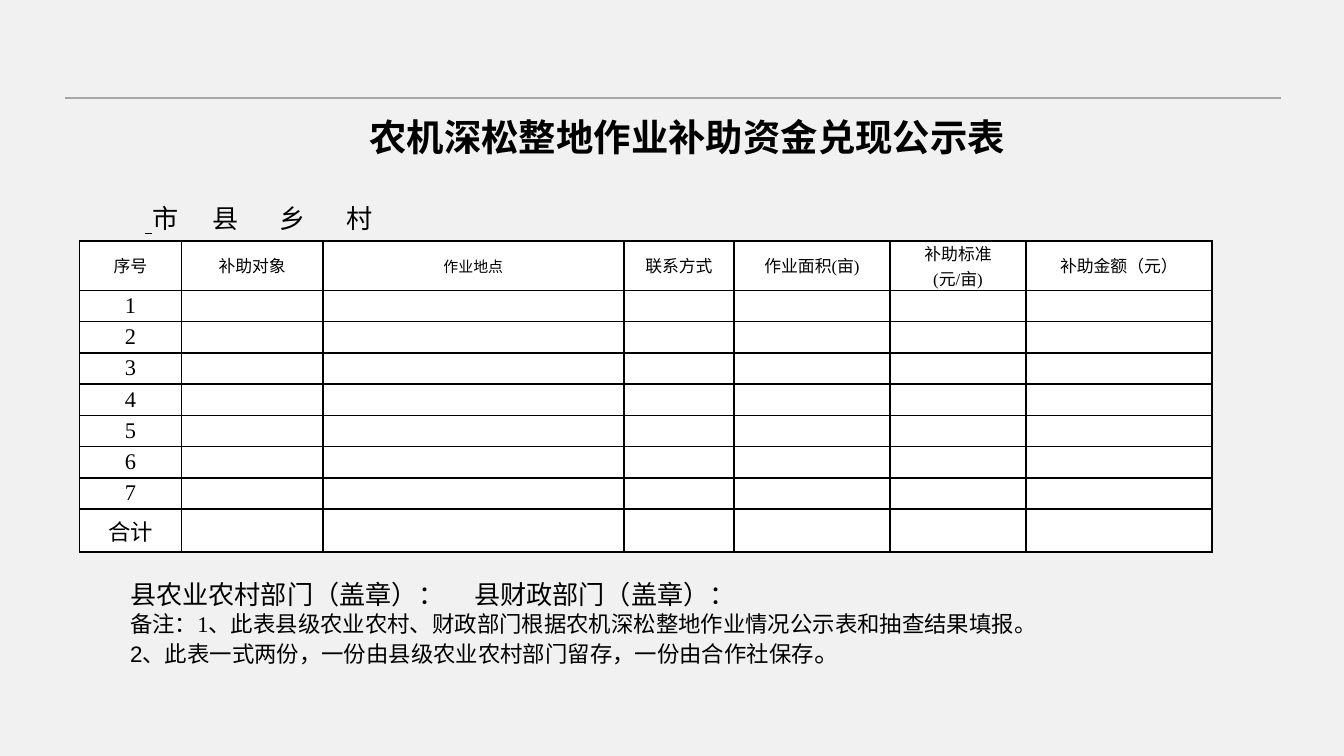
from dataclasses import dataclass

from lxml import etree
from pptx import Presentation
from pptx.dml.color import RGBColor
from pptx.enum import shapes, text
from pptx.oxml import ns
from pptx.util import Cm, Pt

COLORS = {"background": "F1F1F1", "rule": "A6A6A6", "ink": "000000", "cell": "FFFFFF"}
SERIF, SANS, FORM = "Times New Roman", "Arial", "Calibri"


@dataclass
class Span:
    content: str
    size: float
    font: str = SERIF
    bold: bool = False
    underline: bool = False


@dataclass
class Column:
    heading: str
    width: float
    size: float = 9


@dataclass
class Box:
    left: float
    top: float
    width: float
    height: float

    def lengths(self) -> list:
        return [Cm(self.left), Cm(self.top), Cm(self.width), Cm(self.height)]


COLUMNS = [
    Column("序号", 1.93),
    Column("补助对象", 2.67),
    Column("作业地点", 5.69, 8),
    Column("联系方式", 2.08),
    Column("作业面积(亩)", 2.95),
    Column("补助标准 (元/亩)", 2.57),
    Column("补助金额（元）", 3.51),
]
ROW_LABELS = [str(number) for number in range(1, 8)] + ["合计"]
ROW_HEIGHTS = [0.94] + [0.59] * 7 + [0.81]


def color(name: str) -> RGBColor:
    return RGBColor.from_string(COLORS[name])


def add_spans(paragraph, spans: list[Span]) -> None:
    for span in spans:
        run = paragraph.add_run()
        run.text = span.content
        formats = {"size": Pt(span.size), "name": span.font,
                   "bold": span.bold, "underline": span.underline}
        for name, value in formats.items():
            setattr(run.font, name, value)
        run.font.color.rgb = color("ink")


def set_tabs(paragraph, stops: list[float], indent: float = 0) -> None:
    """Set left tab stops and the first-line indent, in centimetres."""
    properties = paragraph._p.get_or_add_pPr()
    properties.set("marL", "0")
    properties.set("indent", str(Cm(indent)))
    tabs = etree.SubElement(properties, ns.qn("a:tabLst"))
    for stop in stops:
        etree.SubElement(tabs, ns.qn("a:tab"), pos=str(Cm(stop)), algn="l")


def add_borders(cell) -> None:
    properties = cell._tc.get_or_add_tcPr()
    for side in ("lnL", "lnR", "lnT", "lnB"):
        line = etree.SubElement(properties, ns.qn(f"a:{side}"), w=str(Pt(1)))
        fill = etree.SubElement(line, ns.qn("a:solidFill"))
        etree.SubElement(fill, ns.qn("a:srgbClr"), val=COLORS["ink"])


def fill_cell(cell, label: str, size: float) -> None:
    add_borders(cell)
    cell.fill.solid()
    cell.fill.fore_color.rgb = color("cell")
    formats = {"margin_left": Cm(0.15), "margin_right": Cm(0.15), "margin_top": 0,
               "margin_bottom": 0, "vertical_anchor": text.MSO_ANCHOR.MIDDLE}
    for name, value in formats.items():
        setattr(cell, name, value)
    paragraph = cell.text_frame.paragraphs[0]
    paragraph.alignment = text.PP_ALIGN.CENTER
    if label:
        add_spans(paragraph, [Span(label, size)])
    else:
        # Empty cells need a small font so that the row keeps its height.
        etree.SubElement(paragraph._p, ns.qn("a:endParaRPr"), sz=str(int(size * 100)))


def add_rule(slide) -> None:
    rule = slide.shapes.add_connector(
        shapes.MSO_CONNECTOR.STRAIGHT, Cm(1.22), Cm(1.85), Cm(24.2), Cm(1.85))
    rule.line.color.rgb = color("rule")
    rule.line.width = Pt(1)
    etree.SubElement(rule._element.spPr, ns.qn("a:effectLst"))


def add_title(slide) -> None:
    title = slide.shapes.title
    title.left, title.top, title.width, title.height = Box(6.68, 2.03, 12.62, 1.12).lengths()
    frame = title.text_frame
    frame.word_wrap = False
    frame.auto_size = text.MSO_AUTO_SIZE.NONE
    frame.vertical_anchor = text.MSO_ANCHOR.MIDDLE
    paragraph = frame.paragraphs[0]
    paragraph.alignment = text.PP_ALIGN.CENTER
    add_spans(paragraph, [Span("农机深松整地作业补助资金兑现公示表", 20, bold=True)])


def add_text_frame(slide, box: Box, anchor):
    frame = slide.shapes.add_textbox(*box.lengths()).text_frame
    frame.word_wrap = True
    frame.vertical_anchor = anchor
    return frame


def add_place_line(slide) -> None:
    """Place names with an underlined blank before each."""
    frame = add_text_frame(slide, Box(2.49, 3.56, 8.2, 1.02), text.MSO_ANCHOR.TOP)
    paragraph = frame.paragraphs[0]
    set_tabs(paragraph, [1.64 + 1.49 * step for step in range(3)])
    spans = [Span(" ", 18, FORM, underline=True), Span("市", 14, FORM)]
    for place in "县乡村":
        spans += [Span("\t", 14, FORM, underline=True), Span(place, 14, FORM)]
    add_spans(paragraph, spans)


def add_subsidy_table(slide) -> None:
    box = Box(1.5, 4.55, sum(column.width for column in COLUMNS), sum(ROW_HEIGHTS))
    table = slide.shapes.add_table(
        len(ROW_HEIGHTS), len(COLUMNS), *box.lengths()).table
    for row, height in zip(table.rows, ROW_HEIGHTS):
        row.height = Cm(height)
    for index, column in enumerate(COLUMNS):
        table.columns[index].width = Cm(column.width)
        fill_cell(table.cell(0, index), column.heading, column.size)
        for row, label in enumerate(ROW_LABELS, 1):
            fill_cell(table.cell(row, index), label if index == 0 else "", 12)


def add_notes(slide) -> None:
    lines = [
        [Span("县农业农村部门（盖章）：\t县财政部门（盖章）：", 14)],
        [Span("备注：1、此表县级农业农村、财政部门根据农机深松整地作业情况公示表和抽查结果填报。", 12)],
        [Span("2、此表一式两份，一份由县级农业农村部门留存，一份由合作社保存", 12, SANS),
         Span("。", 14, SANS)],
    ]
    frame = add_text_frame(slide, Box(1.09, 11.15, 25.4, 1.27), text.MSO_ANCHOR.MIDDLE)
    for index, spans in enumerate(lines):
        paragraph = frame.add_paragraph() if index else frame.paragraphs[0]
        set_tabs(paragraph, [10.5], indent=1.12)
        add_spans(paragraph, spans)


def main() -> None:
    presentation = Presentation()
    presentation.slide_width, presentation.slide_height = Cm(25.4), Cm(14.29)
    slide = presentation.slides.add_slide(presentation.slide_layouts[5])
    slide.background.fill.solid()
    slide.background.fill.fore_color.rgb = color("background")
    for draw in (add_rule, add_title, add_place_line, add_subsidy_table, add_notes):
        draw(slide)
    presentation.save("out.pptx")


if __name__ == "__main__":
    main()
